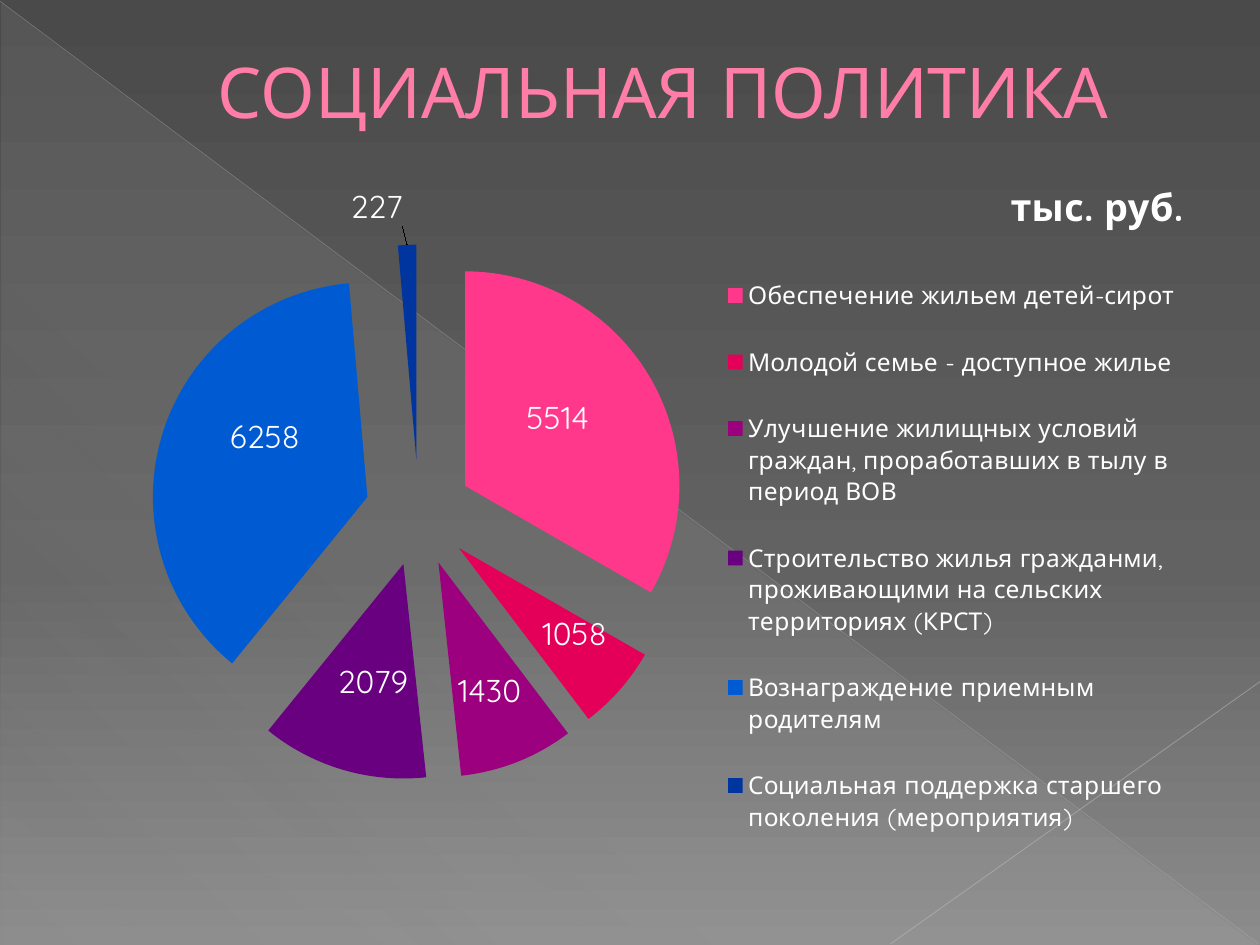
from lxml import etree
from pptx import Presentation
from pptx.chart.data import CategoryChartData
from pptx.dml.color import RGBColor
from pptx.enum import chart as kinds, shapes, text
from pptx.oxml import parse_xml
from pptx.oxml.ns import nsdecls, qn
from pptx.util import Inches, Pt

# Content
TITLE = "СОЦИАЛЬНАЯ ПОЛИТИКА"
UNIT = "тыс. руб."
FONT = "Quicksand"
WHITE = RGBColor(0xFF, 0xFF, 0xFF)
ROSE = RGBColor(0xFF, 0x7D, 0xA7)
# Category, value, colour, label shift in shares of the chart
ROWS = [
    ("Обеспечение жильем детей-сирот",
     5514, RGBColor(0xFF, 0x38, 0x8C), (0, -0.02)),
    ("Молодой семье - доступное жилье",
     1058, RGBColor(0xE4, 0x00, 0x59), (0.03, 0.02)),
    ("Улучшение жилищных условий граждан, проработавших в тылу в период ВОВ",
     1430, RGBColor(0x9C, 0x00, 0x7F), (0.01, 0.04)),
    ("Строительство жилья гражданми, проживающими на сельских территориях (КРСТ)",
     2079, RGBColor(0x68, 0x00, 0x7F), (0, 0.02)),
    ("Вознаграждение приемным родителям",
     6258, RGBColor(0x00, 0x5B, 0xD3), (0, -0.04)),
    ("Социальная поддержка старшего поколения (мероприятия)",
     227, RGBColor(0x00, 0x34, 0x9E), (-0.03, -0.2)),
]
# Gradient stops: position %, colour, opacity %
DUSK = [(0, RGBColor(0x4A, 0x4A, 0x4A), 100), (60, RGBColor(0x62, 0x62, 0x62), 100),
        (100, RGBColor(0x8C, 0x8C, 0x8C), 100)]
GREY = RGBColor(0xD2, 0xD2, 0xD2)
VEIL = [(0, GREY, 10), (70, GREY, 8), (100, GREY, 1)]
# Lines: from, to, colour, width, opacity %
RAYS = [((0, 0.01), (9.99, 7.49), RGBColor(0xBF, 0xBF, 0xBF), 0.39, 35),
        ((10, 5.41), (7.07, 7.49), RGBColor(0xC6, 0xC6, 0xC6), 0.47, 45)]


def blend(fill, stops, angle):
    """Fill with a linear gradient of the given stops."""
    fill.gradient()
    grad = fill._fill._gradFill
    for kid in list(grad):
        grad.remove(kid)
    marks = "".join(
        f'<a:gs pos="{pos * 1000}"><a:srgbClr val="{tone}">'
        f'<a:alpha val="{alpha * 1000}"/></a:srgbClr></a:gs>'
        for pos, tone, alpha in stops)
    grad.append(parse_xml(f'<a:gsLst {nsdecls("a")}>{marks}</a:gsLst>'))
    etree.SubElement(grad, qn("a:lin"), ang=str(angle * 60000), scaled="0")


def layout(x, y, w=None, h=None, mode="edge", inner=False):
    """Manual chart layout in shares of the chart's size."""
    node = parse_xml(f'<c:layout {nsdecls("c")}><c:manualLayout/></c:layout>')
    vals = [("layoutTarget", "inner")] if inner else []
    if mode:
        vals += [("xMode", mode), ("yMode", mode)]
    vals += [("x", x), ("y", y)]
    if w:
        vals += [("w", w), ("h", h)]
    for tag, val in vals:
        etree.SubElement(node[0], qn(f"c:{tag}"), val=str(val))
    return node


def place(host, node, after=None):
    """Put a layout into its host, replacing any old one."""
    for old in host.findall(qn("c:layout")):
        host.remove(old)
    spot = host.find(qn(after)) if after else None
    if spot is None:
        host.insert(0, node)
    else:
        spot.addnext(node)


def style(font, size):
    font.size, font.name = Pt(size), FONT
    font.color.rgb = WHITE


deck = Presentation()
deck.slide_width, deck.slide_height = Inches(10), Inches(7.5)
slide = deck.slides.add_slide(deck.slide_layouts[6])

# Backdrop
blend(slide.background.fill, DUSK, 90)
wedge = slide.shapes.add_shape(
    shapes.MSO_SHAPE.RIGHT_TRIANGLE, *map(Inches, (0.01, 0.02, 9.98, 7.48)))
wedge.shadow.inherit = False
wedge.line.fill.background()
blend(wedge.fill, VEIL, 133)
for start, end, tone, width, alpha in RAYS:
    ray = slide.shapes.add_connector(
        shapes.MSO_CONNECTOR.STRAIGHT, *map(Inches, start + end))
    ray.line.color.rgb = tone
    ray.line.width = Pt(width)
    props = ray._element.spPr
    etree.SubElement(next(props.iter(qn("a:srgbClr"))), qn("a:alpha"),
                     val=str(alpha * 1000))
    etree.SubElement(props, qn("a:effectLst"))

# Title
head = slide.shapes.add_textbox(*map(Inches, (0.5, 0.29, 9, 0.86))).text_frame
head.word_wrap = True
head.vertical_anchor = text.MSO_ANCHOR.MIDDLE
para = head.paragraphs[0]
para.text = TITLE
para.alignment = text.PP_ALIGN.CENTER
para._p.get_or_add_pPr().set("marL", str(Inches(0.53)))
para.font.size, para.font.name = Pt(40), FONT
para.font.color.rgb = ROSE

# Pie
data = CategoryChartData()
data.categories = [row[0] for row in ROWS]
data.add_series("Series 1", [row[1] for row in ROWS])
pie = slide.shapes.add_chart(
    kinds.XL_CHART_TYPE.PIE, *map(Inches, (0.35, 1.31, 9.29, 5.75)), data).chart
style(pie.font, 18)
plot = pie.plots[0]
plot.vary_by_categories = True
place(pie._chartSpace.chart.plotArea, layout(0, 0.11, 0.64, 0.74, inner=True))
ring = plot.series[0]
ring.format.line.fill.background()
burst = etree.Element(qn("c:explosion"), val="25")
ring._element.find(qn("c:spPr")).addnext(burst)

# Slices and their value labels
tags = ring.data_labels
tags.show_value = True
tags.position = kinds.XL_LABEL_POSITION.CENTER
style(tags.font, 18)
for i, (_, _, tone, shift) in enumerate(ROWS):
    point = ring.points[i]
    point.format.fill.solid()
    point.format.fill.fore_color.rgb = tone
    label = point.data_label
    label.position = kinds.XL_LABEL_POSITION.CENTER
    style(label.font, 18)
    place(label._dLbl, layout(*shift, mode=None), "c:idx")
lead = tags._element.find(qn("c:showLeaderLines"))
if lead is None:
    lead = etree.SubElement(tags._element, qn("c:showLeaderLines"))
lead.set("val", "1")

# Unit heading
pie.has_title = True
unit = pie.chart_title
unit.text_frame.text = UNIT
font = unit.text_frame.paragraphs[0].font
style(font, 21.6)
font.bold = True
place(unit._element, layout(0.82, 0.01), "c:tx")

# Legend
pie.has_legend = True
key = pie.legend
key.position = kinds.XL_LEGEND_POSITION.RIGHT
key.include_in_layout = False
style(key.font, 14)
place(key._element, layout(0.57, 0.11, 0.41, 0.86), "c:legendPos")

deck.save("out.pptx")
